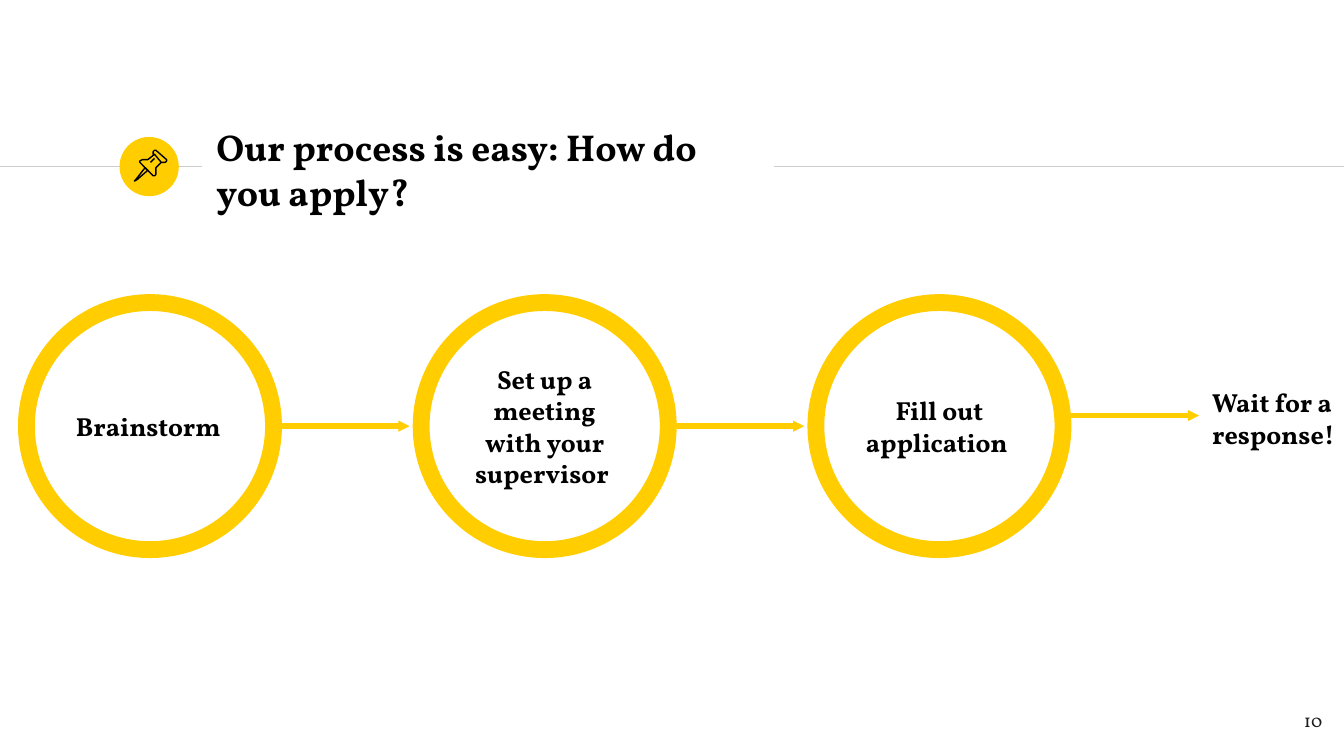
from collections import namedtuple
from dataclasses import dataclass

from lxml import etree
from pptx import Presentation
from pptx import util as u
from pptx.dml.color import RGBColor
from pptx.enum import shapes, text
from pptx.oxml import ns

Cm, Pt = u.Cm, u.Pt
Box = namedtuple("Box", "left top width height")


@dataclass(frozen=True)
class Theme:
    font: str = "Vollkorn"
    accent: RGBColor = RGBColor(0xFF, 0xCD, 0x00)
    rule: RGBColor = RGBColor(0xCC, 0xCC, 0xCC)
    ink: RGBColor = RGBColor(0, 0, 0)
    number: RGBColor = RGBColor(0x1D, 0x1D, 0x1B)
    title_size: float = 20
    body_size: float = 14
    number_size: float = 10
    hairline: float = 0.75
    arrow: float = 3
    ring: float = 9


THEME = Theme()
LEFT, CENTER, RIGHT = (text.PP_ALIGN.LEFT, text.PP_ALIGN.CENTER,
                       text.PP_ALIGN.RIGHT)
MIDDLE, TOP = text.MSO_ANCHOR.MIDDLE, text.MSO_ANCHOR.TOP

# Pin outlines on a grid 24 units wide: (points, closed)
PIN_GRID = 24
PIN = [
    ([(8, 13), (1, 22), (0, 23), (2, 22), (10, 15)], True),
    ([(15, 3), (20, 9), (22, 9), (23, 9), (24, 8), (24, 7), (16, 0),
      (15, 0), (14, 1), (14, 3)], True),
    ([(15, 3), (10, 7), (8, 7), (6, 7), (4, 8), (4, 9), (14, 19),
      (15, 19), (16, 18), (16, 13), (20, 9)], False),
    ([(12, 9), (15, 6)], False),
]
STEPS = [
    ("Brainstorm", LEFT),
    ("Set up a meeting with your supervisor ", CENTER),
    ("Fill out application ", CENTER),
]


def set_all(target, values):
    for name, value in values.items():
        setattr(target, name, value)


def write(shape, words, size, align=LEFT, anchor=TOP, bold=True,
          color=THEME.ink):
    frame = shape.text_frame
    inset = Cm(0.25)
    set_all(frame, dict(word_wrap=True, vertical_anchor=anchor,
                        margin_left=inset, margin_right=inset,
                        margin_top=inset, margin_bottom=inset))
    para = frame.paragraphs[0]
    para.alignment = align
    span = para.add_run()
    span.text = words
    set_all(span.font, dict(name=THEME.font, size=Pt(size), bold=bold))
    span.font.color.rgb = color


def add_text(page, box, words, size, **formats):
    write(page.shapes.add_textbox(*box), words, size, **formats)


def add_line(page, start, end, color, weight, arrow=False):
    line = page.shapes.add_connector(shapes.MSO_CONNECTOR.STRAIGHT,
                                     *start, *end)
    line.line.color.rgb = color
    line.line.width = Pt(weight)
    if arrow:
        etree.SubElement(line.line._get_or_add_ln(), ns.qn("a:tailEnd"),
                         type="triangle", w="sm", len="sm")
    etree.SubElement(line._element.spPr, ns.qn("a:effectLst"))


def add_circle(page, box):
    circle = page.shapes.add_shape(shapes.MSO_SHAPE.OVAL, *box)
    circle.shadow.inherit = False
    return circle


def add_pin(page, box):
    for points, closed in PIN:
        builder = page.shapes.build_freeform(*points[0],
                                             scale=box.width / PIN_GRID)
        builder.add_line_segments(points[1:], close=closed)
        part = builder.convert_to_shape(box.left, box.top)
        part.shadow.inherit = False
        part.fill.background()
        part.line.color.rgb = THEME.ink
        part.line.width = Pt(THEME.hairline)


def add_header(page, box):
    """Title between two rules, with a pin badge on the left rule."""
    middle = box.top + box.height // 2
    right = box.left + box.width
    for start, end in [(0, 3.81), (14.63, None)]:
        stop = right if end is None else box.left + Cm(end)
        add_line(page, (box.left + Cm(start), middle), (stop, middle),
                 THEME.rule, THEME.hairline)
    badge = Box(box.left + Cm(2.26), box.top, box.height, box.height)
    circle = add_circle(page, badge)
    circle.fill.solid()
    circle.fill.fore_color.rgb = THEME.accent
    circle.line.fill.background()
    add_pin(page, Box(badge.left + Cm(0.28), badge.top + Cm(0.25),
                      Cm(0.61), Cm(0.61)))
    add_text(page, Box(box.left + Cm(3.84), box.top, Cm(10.77), Cm(1.22)),
             "Our process is easy: How do you apply?",
             THEME.title_size, anchor=MIDDLE)


def add_process(page, box):
    """Ringed steps, each with an arrow to what follows, then the outcome."""
    pitch, reach = Cm(7.46), Cm(2.57)
    size = box.height
    for index, (words, align) in enumerate(STEPS):
        ring = Box(box.left + index * pitch, box.top, size, size)
        circle = add_circle(page, ring)
        circle.fill.background()
        circle.line.color.rgb = THEME.accent
        circle.line.width = Pt(THEME.ring)
        write(circle, words, THEME.body_size, align=align, anchor=MIDDLE)

        last = index == len(STEPS) - 1
        level = box.top + size // 2 - (Cm(0.2) if last else 0)
        start = ring.left + size
        add_line(page, (start, level), (start + reach, level),
                 THEME.accent, THEME.arrow, arrow=True)
    outcome = Box(start + reach, box.top + Cm(1.34), Cm(4.19), Cm(1.98))
    add_text(page, outcome, "Wait for a response!", THEME.body_size)


def add_page_number(page, box):
    add_text(page, box, "10", THEME.number_size, align=RIGHT, bold=False,
             color=THEME.number)


def main():
    deck = Presentation()
    set_all(deck, dict(slide_width=Cm(25.4), slide_height=Cm(14.29)))
    page = deck.slides.add_slide(deck.slide_layouts[6])
    add_header(page, Box(0, Cm(2.59), deck.slide_width, Cm(1.12)))
    add_process(page, Box(Cm(0.5), Cm(5.72), Cm(24.9), Cm(4.67)))
    add_page_number(page, Box(Cm(23.72), Cm(13.18), Cm(1.52), Cm(1.09)))
    deck.save("out.pptx")


if __name__ == "__main__":
    main()
